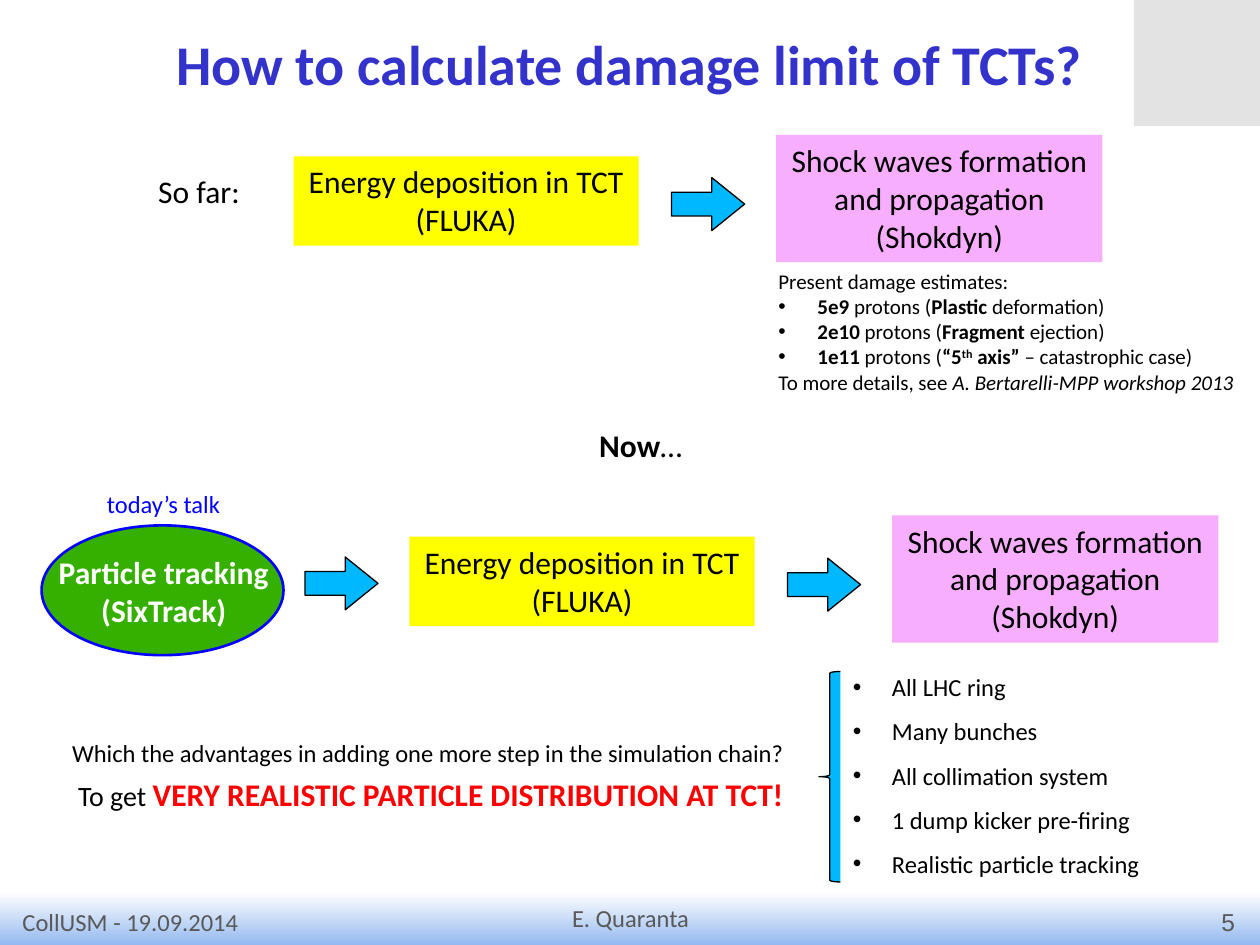
from lxml import etree
from pptx import Presentation
from pptx.dml.color import RGBColor
from pptx.enum import shapes, text
from pptx.oxml.ns import qn
from pptx.util import Inches, Pt

BLACK, GREY, BLUE, SKY = "000000", "595959", "0000FF", "00B8FF"
LEFT, CENTER, RIGHT = text.PP_ALIGN.LEFT, text.PP_ALIGN.CENTER, text.PP_ALIGN.RIGHT
SHAPE = shapes.MSO_SHAPE


def rgb(value):
    """Turn a hex string into a colour."""
    return RGBColor.from_string(value)


def add_shape(slide, kind, box, fill, line=None, width=0.75):
    """Add a flat preset shape at a box given in inches."""
    shape = slide.shapes.add_shape(kind, *map(Inches, box))
    shape.shadow.inherit = False
    shape.fill.solid()
    shape.fill.fore_color.rgb = rgb(fill)
    if line:
        shape.line.color.rgb = rgb(line)
        shape.line.width = Pt(width)
    else:
        shape.line.fill.background()
    return shape


def add_bullet(paragraph):
    """Give a paragraph a black bullet with a hanging indent."""
    properties = paragraph._p.get_or_add_pPr()
    properties.set("marL", str(Inches(0.31)))
    properties.set("indent", str(Inches(-0.31)))
    color = etree.SubElement(properties, qn("a:buClr"))
    etree.SubElement(color, qn("a:srgbClr"), val=BLACK)
    etree.SubElement(properties, qn("a:buFont"), typeface="Arial")
    etree.SubElement(properties, qn("a:buChar"), char="•")


def write(shape, lines, size, color=BLACK, align=LEFT, bold=None, font="Calibri",
          wrap=True, spacing=None, bullets=(), anchor=text.MSO_ANCHOR.TOP):
    """Fill a shape with lines, each a string or a list of (text, style) runs."""
    frame = shape.text_frame
    frame.word_wrap = wrap
    frame.vertical_anchor = anchor
    for index, line in enumerate(lines):
        paragraph = frame.add_paragraph() if index else frame.paragraphs[0]
        paragraph.alignment = align
        if spacing:
            paragraph.line_spacing = spacing
        if index in bullets:
            add_bullet(paragraph)
        paragraph.font.name = font
        paragraph.font.size = Pt(size)
        paragraph.font.bold = bold
        paragraph.font.color.rgb = rgb(color)
        for words, style in [(line, {})] if isinstance(line, str) else line:
            run = paragraph.add_run()
            run.text = words
            style_run(run, **style)


def style_run(run, bold=None, italic=None, size=None, color=None, raised=False):
    """Apply what sets a run apart from its paragraph."""
    run.font.bold = bold
    run.font.italic = italic
    if size:
        run.font.size = Pt(size)
    if color:
        run.font.color.rgb = rgb(color)
    if raised:
        run.font._element.set("baseline", "30000")


def add_text(slide, box, lines, size, **options):
    """Add a text box at a box given in inches."""
    write(slide.shapes.add_textbox(*map(Inches, box)), lines, size, **options)


def add_background(slide):
    """Draw the footer band and the corner square."""
    band = add_shape(slide, SHAPE.RECTANGLE, (0, 7.08, 10, 0.42), "FFFFFF")
    band.fill.gradient()
    band.fill.gradient_angle = 90
    for stop, color in zip(band.fill.gradient_stops, ("94B9F0", "FFFFFF")):
        stop.color.rgb = rgb(color)
    corner = add_shape(slide, SHAPE.RECTANGLE, (9, 0, 1, 1), "DDDDDD")
    color = corner._element.spPr.find(f"{qn('a:solidFill')}/{qn('a:srgbClr')}")
    etree.SubElement(color, qn("a:alpha"), val="82000")


def add_title(slide, box, words):
    """Place and format the title placeholder."""
    title = slide.shapes.title
    title.left, title.top, title.width, title.height = map(Inches, box)
    write(title, [words], 32, color="3333CC", align=CENTER, bold=True,
          anchor=text.MSO_ANCHOR.MIDDLE)


def add_footer(slide, top):
    """Write the event, the author and the slide number."""
    add_text(slide, (0.08, top, 2.32, 0.25), ["CollUSM - 19.09.2014"], 14, color=GREY)
    add_text(slide, (3.42, top, 3.17, 0.27), ["E. Quaranta"], 14, color=GREY,
             align=CENTER, wrap=False, anchor=text.MSO_ANCHOR.MIDDLE)
    add_text(slide, (7.58, top, 2.32, 0.25), ["5"], 14, color=GREY, align=RIGHT,
             font="Arial")


def add_arrow(slide, left, top):
    """Add a block arrow between two steps."""
    arrow = add_shape(slide, SHAPE.RIGHT_ARROW, (left, top, 0.58, 0.42), SKY, BLACK)
    arrow.adjustments[0] = 0.45
    arrow.adjustments[1] = 0.62


def add_chain(slide, left, top):
    """Draw the energy step, an arrow and the shock wave step."""
    energy = add_shape(slide, SHAPE.RECTANGLE, (left, top + 0.17, 2.74, 0.71), "FFFF00")
    write(energy, ["Energy deposition in TCT", "(FLUKA)"], 18, align=CENTER, wrap=False)
    add_arrow(slide, left + 3, top + 0.34)
    shock = add_shape(slide, SHAPE.RECTANGLE, (left + 3.83, top, 2.59, 1.01), "F8AEFE")
    write(shock, ["Shock waves formation", "and propagation", "(Shokdyn)"], 18,
          align=CENTER, wrap=False)


def add_tracking(slide, left, top):
    """Draw the particle tracking step with its label and arrow."""
    add_shape(slide, SHAPE.OVAL, (left, top, 1.92, 1.03), "36B000", BLUE, 1.5)
    add_text(slide, (left + 0.02, top + 0.17, 1.9, 0.71),
             ["Particle tracking", "(SixTrack)"], 18, color="FFFFFF", align=CENTER,
             bold=True, wrap=False)
    add_text(slide, (left + 0.42, top - 0.34, 1.17, 0.34), ["today’s talk"], 14,
             color=BLUE)
    add_arrow(slide, left + 2.09, top + 0.25)


def add_estimates(slide, box):
    """List the present damage estimates."""
    bold = {"bold": True}
    add_text(slide, box, [
        "Present damage estimates:",
        [("5e9", bold), (" protons (", {}), ("Plastic ", bold), ("deformation)", {})],
        [("2e10 ", bold), ("protons (", {}), ("Fragment ", bold), ("ejection)", {})],
        [("1e11 ", bold), ("protons (", {}), ("“5", bold),
         ("th", {"bold": True, "raised": True}), (" axis”", bold),
         (" – catastrophic case)", {})],
        [("To more details, see ", {}),
         ("A. Bertarelli-MPP workshop 2013", {"italic": True})],
    ], 12, bullets=(1, 2, 3))


def add_advantages(slide, top):
    """State the question and its answer beside the braced list."""
    add_text(slide, (0.17, top + 0.59, 6.5, 0.74), [
        "Which the advantages in adding one more step in the simulation chain? ",
        [("To get ", {"size": 16}),
         ("VERY REALISTIC PARTICLE DISTRIBUTION AT TCT!",
          {"size": 18, "color": "FF0000", "bold": True})],
    ], 14, align=CENTER, spacing=1.2)
    add_shape(slide, SHAPE.LEFT_BRACE, (6.5, top + 0.16, 0.17, 1.67), SKY, BLACK)
    add_text(slide, (6.67, top, 3.08, 1.85), [
        "All LHC ring", "Many bunches", "All collimation system",
        "1 dump kicker pre-firing", "Realistic particle tracking",
    ], 14, spacing=1.5, bullets=range(5))


def main():
    """Build the slide and save it."""
    presentation = Presentation()
    presentation.slide_width, presentation.slide_height = Inches(10), Inches(7.5)
    slide = presentation.slides.add_slide(presentation.slide_layouts[5])
    add_background(slide)
    add_title(slide, (1.17, 0, 7.65, 1), "How to calculate damage limit of TCTs?")
    add_text(slide, (1.08, 1.32, 1, 0.4), ["So far:"], 18, align=CENTER)
    add_chain(slide, 2.33, 1.07)
    add_estimates(slide, (6.08, 2.08, 3.83, 1.11))
    add_text(slide, (1.92, 3.33, 6.33, 0.4), [[("Now", {"bold": True}), ("…", {})]], 18,
             align=CENTER)
    add_tracking(slide, 0.33, 4.17)
    add_chain(slide, 3.25, 4.09)
    add_advantages(slide, 5.17)
    add_footer(slide, 7.15)
    presentation.save("out.pptx")


if __name__ == "__main__":
    main()
